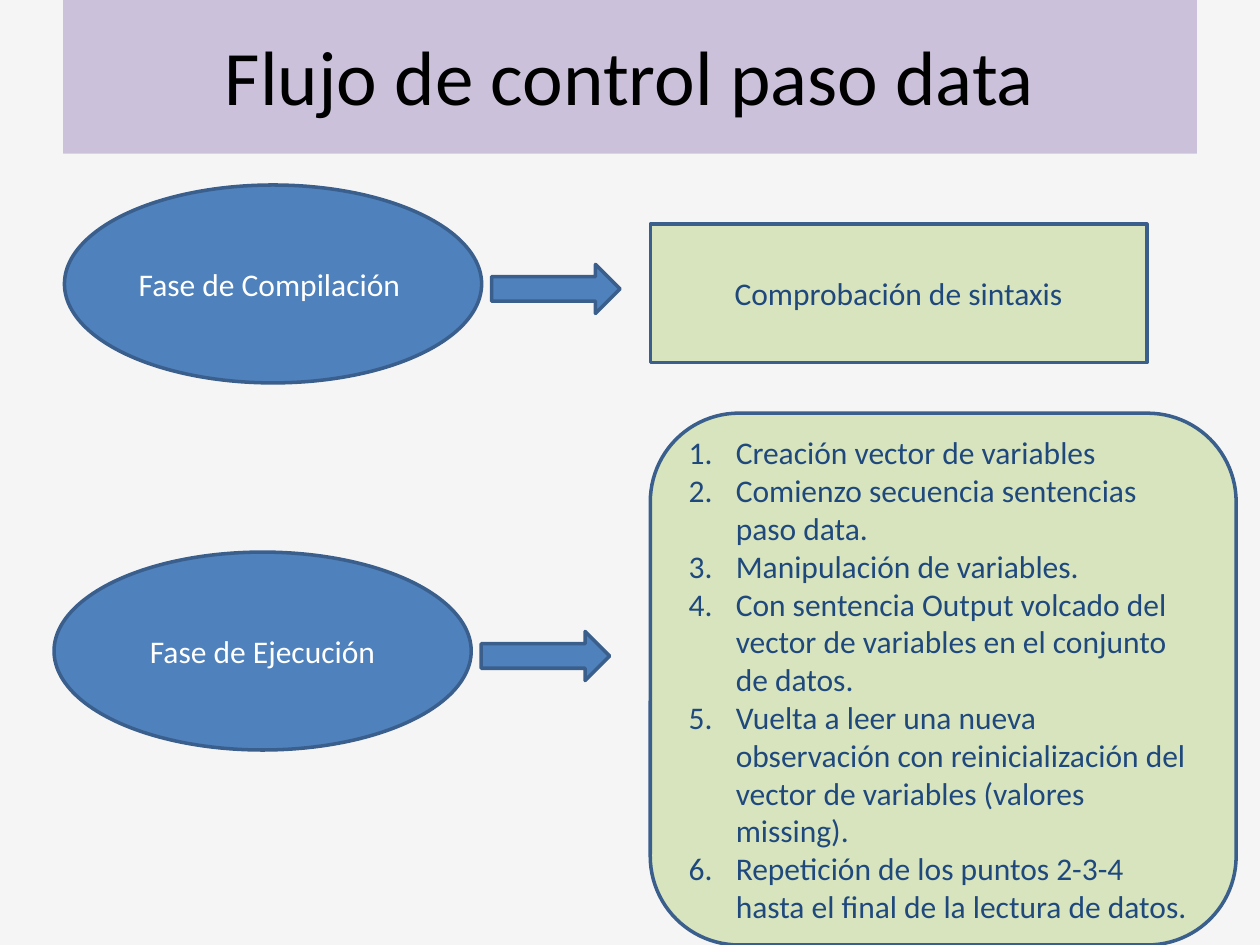
from dataclasses import dataclass

from lxml.etree import SubElement
from pptx import Presentation
from pptx.dml.color import RGBColor
from pptx.enum.shapes import MSO_SHAPE
from pptx.enum.text import MSO_ANCHOR, PP_ALIGN
from pptx.oxml.ns import qn
from pptx.util import Cm, Pt


@dataclass(frozen=True)
class Theme:
    font: str = "Calibri"
    background: RGBColor = RGBColor(0xF5, 0xF5, 0xF5)
    banner: RGBColor = RGBColor(0xCC, 0xC1, 0xDA)
    phase: RGBColor = RGBColor(0x4F, 0x81, 0xBD)
    detail: RGBColor = RGBColor(0xD7, 0xE4, 0xBD)
    outline: RGBColor = RGBColor(0x3A, 0x5F, 0x8C)
    title_text: RGBColor = RGBColor(0, 0, 0)
    phase_text: RGBColor = RGBColor(0xFF, 0xFF, 0xFF)
    detail_text: RGBColor = RGBColor(0x1F, 0x49, 0x7D)
    title_size: Pt = Pt(44)
    body_size: Pt = Pt(18)
    outline_width: Pt = Pt(2)


THEME = Theme()

EXECUTION_STEPS = [
    "Creación vector de variables",
    "Comienzo secuencia sentencias paso data.",
    "Manipulación de variables.",
    "Con sentencia Output volcado del vector de variables en el conjunto de datos.",
    "Vuelta a leer una nueva observación con reinicialización del vector de "
    "variables (valores missing).",
    "Repetición de los puntos 2-3-4 hasta el final de la lectura de datos.",
]


def write(shape, lines, color, size=THEME.body_size, align=PP_ALIGN.CENTER):
    frame = shape.text_frame
    frame.word_wrap = True
    frame.vertical_anchor = MSO_ANCHOR.MIDDLE
    frame.text = "\n".join(lines)
    for paragraph in frame.paragraphs:
        paragraph.alignment = align
        paragraph.font.name = THEME.font
        paragraph.font.size = size
        paragraph.font.color.rgb = color


def number_paragraphs(shape, indent=Cm(0.95)):
    for paragraph in shape.text_frame.paragraphs:
        properties = paragraph._p.get_or_add_pPr()
        properties.set("marL", str(indent))
        properties.set("indent", str(-indent))
        numbering = SubElement(properties, qn("a:buAutoNum"))
        numbering.set("type", "arabicPeriod")
        font = properties.find(qn("a:defRPr"))
        if font is not None:
            font.addprevious(numbering)


def add_title(slide, text):
    title = slide.shapes.title
    title.left, title.top, title.width, title.height = Cm(1.27), Cm(-0.08), Cm(22.86), Cm(3.18)
    title.fill.solid()
    title.fill.fore_color.rgb = THEME.banner
    write(title, [text], THEME.title_text, THEME.title_size)


def add_outlined(slide, preset, left, top, width, height, fill):
    shape = slide.shapes.add_shape(preset, Cm(left), Cm(top), Cm(width), Cm(height))
    shape.shadow.inherit = False
    shape.fill.solid()
    shape.fill.fore_color.rgb = fill
    shape.line.color.rgb = THEME.outline
    shape.line.width = THEME.outline_width
    return shape


def add_phase(slide, name, left, top):
    phase = add_outlined(slide, MSO_SHAPE.OVAL, left, top, 8.41, 3.99, THEME.phase)
    write(phase, [name], THEME.phase_text)
    add_outlined(slide, MSO_SHAPE.RIGHT_ARROW, left + 8.61, top + 1.6, 2.59, 0.99, THEME.phase)


def add_detail(slide, preset, top, width, height, lines, align=PP_ALIGN.CENTER):
    detail = add_outlined(slide, preset, 13.11, top, width, height, THEME.detail)
    write(detail, lines, THEME.detail_text, align=align)
    return detail


def main():
    presentation = Presentation()
    presentation.slide_width, presentation.slide_height = Cm(25.4), Cm(19.05)
    slide = presentation.slides.add_slide(presentation.slide_layouts[5])
    slide.background.fill.solid()
    slide.background.fill.fore_color.rgb = THEME.background

    add_title(slide, "Flujo de control paso data")
    add_phase(slide, "Fase de Compilación ", 1.3, 3.73)
    add_detail(slide, MSO_SHAPE.RECTANGLE, 4.52, 10.01, 2.79, ["Comprobación de sintaxis"])
    add_phase(slide, "Fase de Ejecución", 1.09, 11.13)
    steps = add_detail(slide, MSO_SHAPE.ROUNDED_RECTANGLE, 8.33, 11.81, 10.72,
                       EXECUTION_STEPS, PP_ALIGN.LEFT)
    number_paragraphs(steps)

    presentation.save("out.pptx")


if __name__ == "__main__":
    main()
